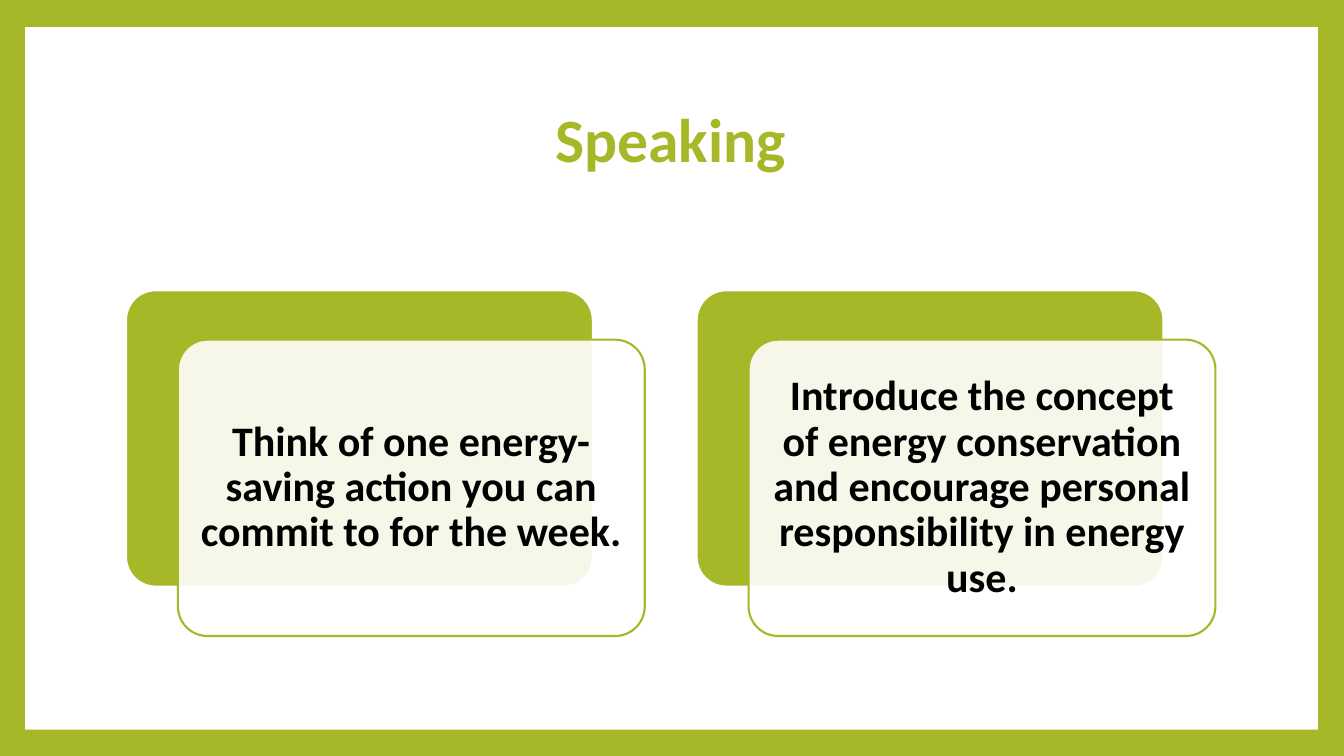
from dataclasses import dataclass

from lxml.etree import SubElement
from pptx import Presentation
from pptx.dml.color import RGBColor
from pptx.enum.shapes import MSO_SHAPE
from pptx.enum.text import MSO_ANCHOR, PP_ALIGN
from pptx.oxml.ns import qn
from pptx.util import Inches, Pt

TITLE = "Speaking"
TASKS = [
    "Think of one energy-saving action you can commit to for the week.",
    "Introduce the concept of energy conservation and encourage personal "
    "responsibility in energy use.",
]


@dataclass(frozen=True)
class Theme:
    green: RGBColor = RGBColor(0xA6, 0xB7, 0x27)
    white: RGBColor = RGBColor(0xFF, 0xFF, 0xFF)
    black: RGBColor = RGBColor(0x00, 0x00, 0x00)
    font: str = "Calibri"
    title_size: int = 44
    task_size: int = 30
    outline: float = 1.5
    card_opacity: int = 90


THEME = Theme()
CARD_WIDTH, CARD_HEIGHT = 4.63, 2.94
CARDS_LEFT, CARDS_TOP = 1.25, 2.88
CARD_PITCH = 5.66
FRONT_SHIFT_X, FRONT_SHIFT_Y = 0.515, 0.49
CARD_INSET = 0.2


def write(frame, text, size, color):
    frame.word_wrap = True
    frame.vertical_anchor = MSO_ANCHOR.MIDDLE
    paragraph = frame.paragraphs[0]
    paragraph.text = text
    paragraph.alignment = PP_ALIGN.CENTER
    paragraph.line_spacing = 0.9
    paragraph.font.name = THEME.font
    paragraph.font.size = Pt(size)
    paragraph.font.bold = True
    paragraph.font.color.rgb = color


def add_panel(slide, kind, left, top, width, height, fill, line=None):
    panel = slide.shapes.add_shape(
        kind, Inches(left), Inches(top), Inches(width), Inches(height))
    panel.shadow.inherit = False
    panel.fill.solid()
    panel.fill.fore_color.rgb = fill
    if line is None:
        panel.line.fill.background()
    else:
        panel.line.color.rgb = line
        panel.line.width = Pt(THEME.outline)
    return panel


def add_card(slide, left, top, fill, line):
    card = add_panel(slide, MSO_SHAPE.ROUNDED_RECTANGLE, left, top,
                     CARD_WIDTH, CARD_HEIGHT, fill, line)
    card.adjustments[0] = 0.1
    return card


def set_fill_opacity(shape, percent):
    color = shape.fill._xPr.find(qn("a:solidFill"))[0]
    SubElement(color, qn("a:alpha")).set("val", str(percent * 1000))


def add_task(slide, left, text):
    """Add a green card with a translucent text card shifted in front of it."""
    add_card(slide, left, CARDS_TOP, THEME.green, THEME.white)
    front = add_card(slide, left + FRONT_SHIFT_X, CARDS_TOP + FRONT_SHIFT_Y,
                     THEME.white, THEME.green)
    set_fill_opacity(front, THEME.card_opacity)
    frame = front.text_frame
    # Rounded rectangles already inset their text by 0.29 of the corner radius.
    inset = Inches(CARD_INSET - 0.29 * 0.1 * CARD_HEIGHT)
    frame.margin_left = frame.margin_right = inset
    frame.margin_top = frame.margin_bottom = inset
    write(frame, text, THEME.task_size, THEME.black)


def main():
    deck = Presentation()
    deck.slide_width, deck.slide_height = Inches(13.33), Inches(7.5)
    slide = deck.slides.add_slide(deck.slide_layouts[6])
    slide.background.fill.solid()
    slide.background.fill.fore_color.rgb = THEME.green
    add_panel(slide, MSO_SHAPE.RECTANGLE, 0.25, 0.27, 12.82, 6.97, THEME.white)

    title = slide.shapes.add_textbox(
        Inches(1.25), Inches(0.67), Inches(10.8), Inches(1.48))
    write(title.text_frame, TITLE, THEME.title_size, THEME.green)

    for column, task in enumerate(TASKS):
        add_task(slide, CARDS_LEFT + column * CARD_PITCH, task)
    deck.save("out.pptx")


if __name__ == "__main__":
    main()
